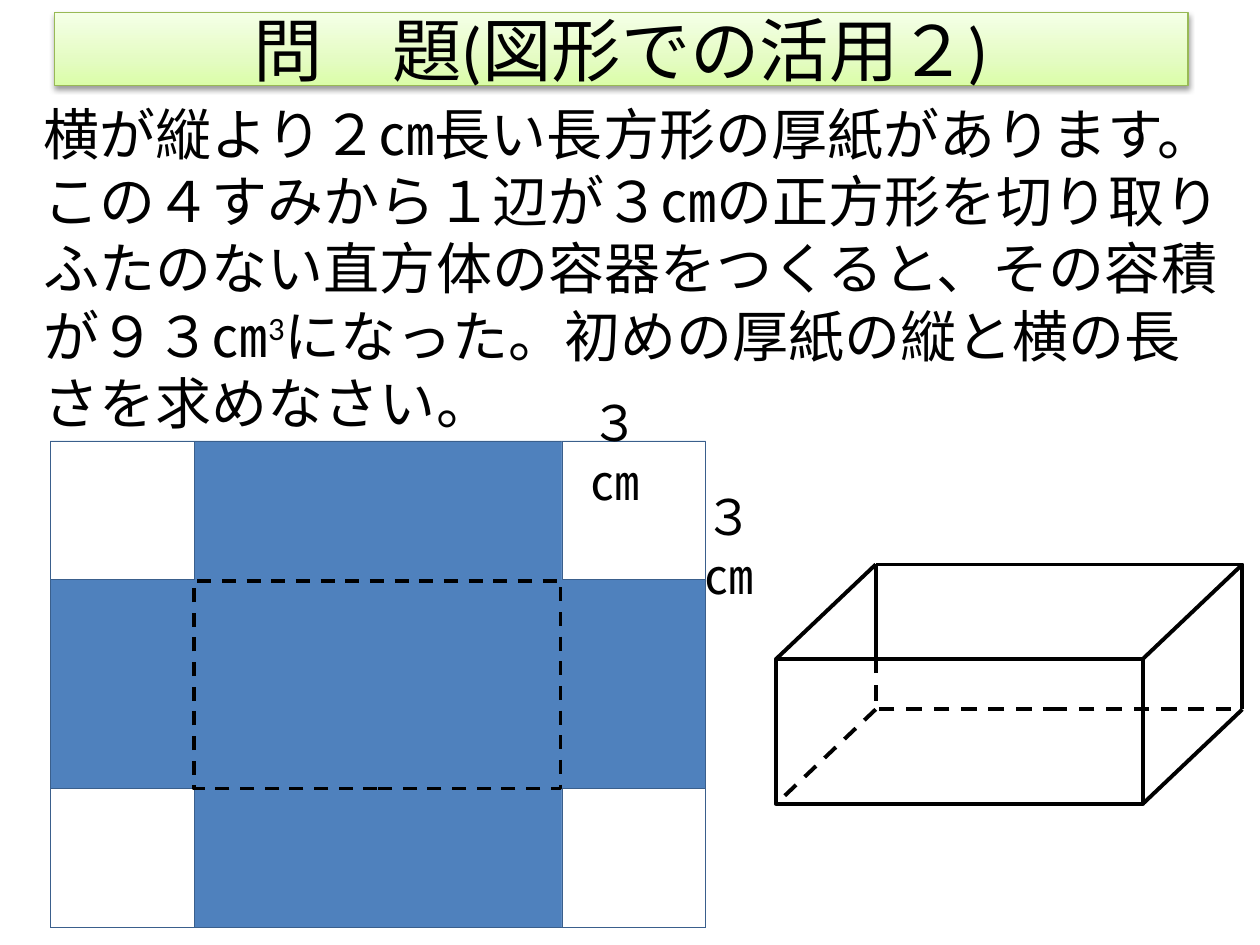
from copy import deepcopy

from lxml.etree import SubElement
from pptx import Presentation
from pptx.dml.color import RGBColor
from pptx.enum.dml import MSO_LINE_DASH_STYLE as Dash
from pptx.enum.shapes import MSO_CONNECTOR as Connector, MSO_SHAPE as Shape
from pptx.enum.text import MSO_ANCHOR as Anchor, MSO_AUTO_SIZE as AutoSize, PP_ALIGN as Align
from pptx.oxml import parse_xml
from pptx.oxml.ns import nsdecls, qn
from pptx.util import Inches, Pt

COLORS = {
    "ink": "000000",
    "card": "4F81BD",
    "edge": "3A5F8C",
    "cutout": "FFFFFF",
    "title_edge": "98B955",
}
TITLE_STOPS = [(0, "DAFDA7"), (0.35, "E4FCC2"), (1, "F5FFE7")]
FONT = "Calibri"


def rgb(name):
    """Return the named palette colour."""
    return RGBColor.from_string(COLORS[name])


def format_run(run, size):
    """Apply the slide font, size and ink colour to a run."""
    run.font.name = FONT
    run.font.size = Pt(size)
    run.font.color.rgb = rgb("ink")


def style_line(line, color, width, dashed=False):
    """Set the colour, width and dash of an outline."""
    line.color.rgb = rgb(color)
    line.width = Pt(width)
    if dashed:
        line.dash_style = Dash.DASH


def fill_title(title):
    """Give the title bar its three-stop gradient and soft shadow."""
    title.fill.gradient()
    title.fill.gradient_angle = 90
    properties = title.element.spPr
    stop_list = properties.find(qn("a:gradFill")).find(qn("a:gsLst"))
    stop_list.append(deepcopy(stop_list[-1]))
    for stop, (position, color) in zip(title.fill.gradient_stops, TITLE_STOPS):
        stop.position = position
        stop.color.rgb = RGBColor.from_string(color)
    style_line(title.line, "title_edge", 0.75)
    properties.append(parse_xml(
        f'<a:effectLst {nsdecls("a")}>'
        '<a:outerShdw blurRad="40000" dist="20000" dir="5400000" rotWithShape="0">'
        f'<a:srgbClr val="{COLORS["ink"]}"><a:alpha val="38000"/></a:srgbClr>'
        '</a:outerShdw></a:effectLst>'))


def add_title(slide, text):
    """Place the heading in the title bar."""
    title = slide.shapes.title
    title.left, title.top = Inches(0.43), Inches(0.1)
    title.width, title.height = Inches(9), Inches(0.58)
    fill_title(title)
    frame = title.text_frame
    frame.text = text
    frame.auto_size = AutoSize.NONE
    frame.vertical_anchor = Anchor.MIDDLE
    frame.paragraphs[0].alignment = Align.CENTER
    format_run(frame.paragraphs[0].runs[0], 39.6)


def add_text(slide, left, top, width, height, parts, size):
    """Add a wrapped text box with one run per part and return its paragraph."""
    box = slide.shapes.add_textbox(Inches(left), Inches(top), Inches(width), Inches(height))
    box.text_frame.word_wrap = True
    paragraph = box.text_frame.paragraphs[0]
    for part in parts:
        run = paragraph.add_run()
        run.text = part
        format_run(run, size)
    return paragraph


def add_problem(slide):
    """Write the problem with its raised cubic exponent."""
    parts = [
        "横が縦より２㎝長い長方形の厚紙があります。この４すみから１辺が３㎝の正方形を"
        "切り取りふたのない直方体の容器をつくると、その容積が９３㎝",
        "3",
        "になった。初めの厚紙の縦と横の長さを求めなさい。",
    ]
    problem = add_text(slide, 0.25, 0.74, 9.61, 2.2, parts, 32)
    problem.runs[1].font._element.set("baseline", "30000")


def add_rect(shapes, left, top, width, height, fill, edge, weight, dashed=False):
    """Add a rectangle, left open when no fill is named."""
    rect = shapes.add_shape(Shape.RECTANGLE, Inches(left), Inches(top), Inches(width), Inches(height))
    rect.shadow.inherit = False
    if fill:
        rect.fill.solid()
        rect.fill.fore_color.rgb = rgb(fill)
    else:
        rect.fill.background()
    style_line(rect.line, edge, weight, dashed)


def add_edge(shapes, start, end, dashed=False):
    """Add one straight edge of the container."""
    edge = shapes.add_connector(Connector.STRAIGHT, *map(Inches, start + end))
    style_line(edge.line, "ink", 2.25, dashed)
    SubElement(edge._element.spPr, qn("a:effectLst"))


def add_cardboard(slide):
    """Draw the cardboard with a square cut from each corner."""
    left, top, width, height = 0.4, 3.5, 5.2, 3.86
    cut_width, cut_height = 1.14, 1.1
    add_rect(slide.shapes, left, top, width, height, "card", "edge", 0.25)
    for x in (left, left + width - cut_width):
        for y in (top, top + height - cut_height):
            add_rect(slide.shapes, x, y, cut_width, cut_height, "cutout", "edge", 0.25)


def add_container(slide):
    """Draw the open container in oblique projection."""
    width, height = 2.91, 1.15
    front_left, front_top, back_left, back_top = 6.16, 5.23, 6.95, 4.48
    front_right, back_right = front_left + width, back_left + width
    shapes = slide.shapes.add_group_shape().shapes
    add_rect(shapes, front_left, front_top, width, height, None, "ink", 2.25)
    add_rect(shapes, back_left, back_top, width, height, None, "ink", 2.25, dashed=True)
    for back_x, front_x in ((back_left, front_left), (back_right, front_right)):
        for drop in (0, height):
            hidden = back_x == back_left and drop > 0
            add_edge(shapes, (back_x, back_top + drop), (front_x, front_top + drop), hidden)
    back_corner = (back_right, back_top)
    add_edge(shapes, back_corner, (back_left, back_top))
    add_edge(shapes, back_corner, (back_right, back_top + height))
    add_edge(shapes, (back_left, back_top), (back_left, front_top))


def main():
    """Build and save the slide."""
    deck = Presentation()
    deck.slide_width, deck.slide_height = Inches(10), Inches(7.5)
    slide = deck.slides.add_slide(deck.slide_layouts[5])
    add_title(slide, "問　題(図形での活用２)")
    add_problem(slide)
    add_cardboard(slide)
    add_container(slide)
    for left, top in ((4.59, 3.07), (5.49, 3.81)):
        add_text(slide, left, top, 0.86, 0.57, ["３㎝"], 28)
    add_rect(slide.shapes, 1.54, 4.61, 2.91, 1.65, "card", "ink", 2, dashed=True)
    deck.save("out.pptx")


if __name__ == "__main__":
    main()
